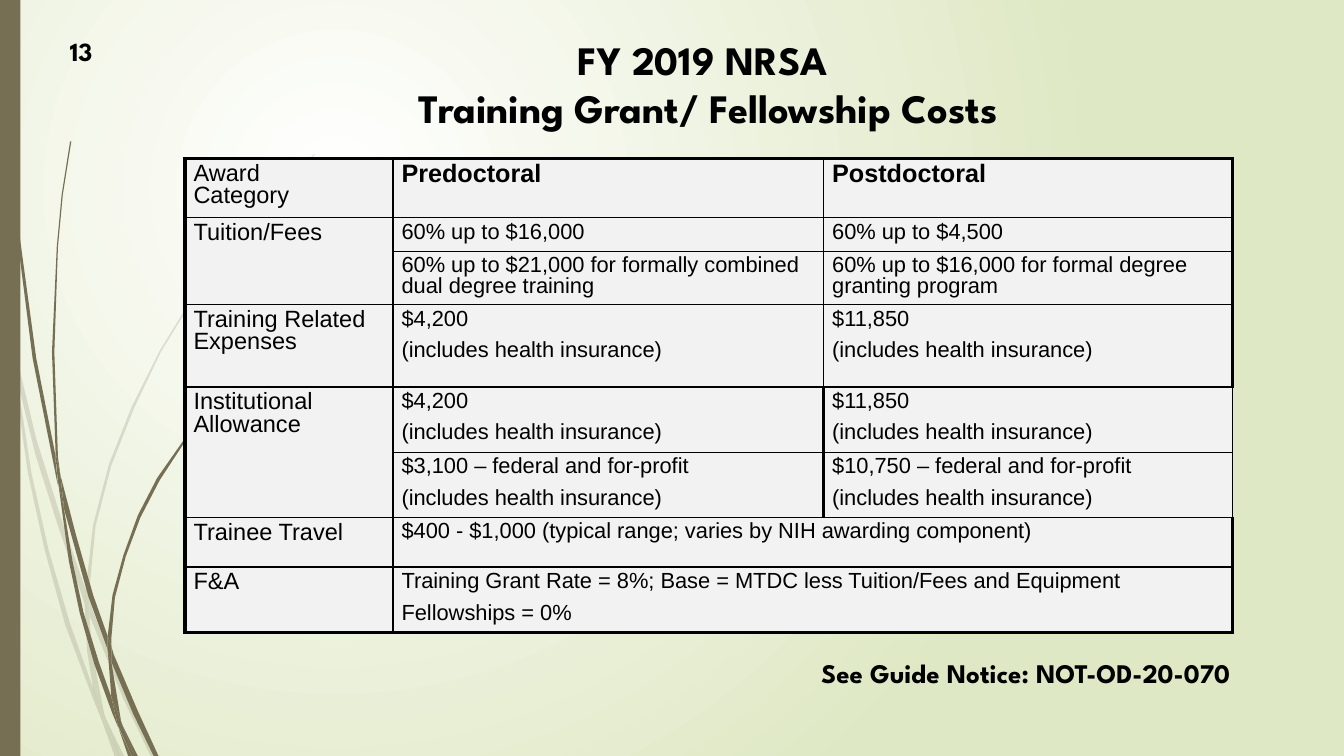
import pptx
import pptx.dml.color
import pptx.enum.shapes
import pptx.enum.text
import pptx.oxml
import pptx.oxml.ns
import pptx.util
from lxml import etree

Inches = pptx.util.Inches
Pt = pptx.util.Pt
RGBColor = pptx.dml.color.RGBColor
Align = pptx.enum.text.PP_ALIGN
Anchor = pptx.enum.text.MSO_ANCHOR
qn = pptx.oxml.ns.qn

BLACK = RGBColor(0x00, 0x00, 0x00)
WHITE = RGBColor(0xFF, 0xFF, 0xFF)
OLIVE = RGBColor(0x76, 0x6F, 0x54)
SAGE = RGBColor(0xDF, 0xE8, 0xC4)
CELL_GREY = RGBColor(0xF2, 0xF2, 0xF2)
HEADING_FONT = "League Spartan"
TABLE_FONT = "Arial"
THIN, THICK = 1, 2.25

PALE_BLADES = [
    [(0.09, 2.92), (0.07, 2.68), (0, 2.35), (0, 2.49), (0.08, 2.87)],
    [(0.48, 4.35), (0.7, 4.99), (0.71, 4.88), (0.52, 4.33), (0.3, 3.63), (0.12, 2.88), (0.14, 3.13), (0.29, 3.75)],
    [(0.77, 5.06), (0.74, 4.96), (0.74, 5.09), (1.02, 5.78), (1.25, 6.26), (1.29, 6.26), (1.06, 5.76)],
    [(0.99, 6.26), (1.03, 6.26), (0.87, 5.93)],
    [(0.77, 5.69), (0.58, 5.16), (0.4, 4.54), (0.26, 3.91), (0.14, 3.13), (0.09, 2.92), (0.23, 3.91),
     (0.37, 4.55), (0.54, 5.17), (0.77, 5.78), (0.84, 5.95), (0.82, 5.89)],
    [(0.7, 4.99), (0.72, 5.38), (0.77, 5.69), (0.8, 5.77), (0.87, 5.93), (0.86, 5.89), (0.76, 5.38),
     (0.74, 5.09), (0.73, 5.07)],
    [(0.74, 4.86), (0.79, 4.35), (0.92, 3.85), (1.11, 3.37), (1.33, 2.91), (1.6, 2.47), (1.9, 2.04), (2.24, 1.65),
     (2.41, 1.46), (2.6, 1.28), (2.6, 1.27), (2.41, 1.46), (2.23, 1.64), (1.9, 2.04), (1.59, 2.46), (1.32, 2.9),
     (1.09, 3.36), (0.9, 3.84), (0.77, 4.34), (0.71, 4.86), (0.71, 4.88), (0.74, 4.96)],
    [(0.84, 5.95), (0.95, 6.26), (0.99, 6.26)],
    [(0.73, 5.07), (0.74, 5.09), (0.74, 4.96), (0.71, 4.88), (0.7, 4.99)],
    [(0.8, 5.77), (0.77, 5.69), (0.82, 5.89), (0.84, 5.95), (0.99, 6.26), (0.87, 5.93)],
]
DARK_BLADES = [
    [(0.06, 0.91), (0.14, 1.94), (0.27, 2.96), (0.47, 3.97), (0.48, 4.01), (0.46, 3.81), (0.46, 3.77), (0.3, 2.96),
     (0.16, 1.93), (0.06, 0.91), (0.04, 0.4), (0.03, 0), (0.02, 0), (0.03, 0.4)],
    [(0.73, 4.93), (0.89, 5.37), (0.89, 5.26), (0.77, 4.92), (0.63, 4.43), (0.5, 3.93), (0.53, 4.21)],
    [(0.94, 5.41), (0.92, 5.34), (0.92, 5.47), (1.1, 5.9), (1.27, 6.25), (1.31, 6.25), (1.14, 5.88)],
    [(0.92, 5.76), (0.82, 5.48), (0.69, 5.06), (0.6, 4.64), (0.53, 4.21), (0.48, 3.98), (0.57, 4.64), (0.66, 5.07),
     (0.78, 5.49), (0.93, 5.9), (0.98, 6.02), (0.97, 5.98)],
    [(0.5, 3.93), (0.48, 3.78), (0.45, 2.91), (0.48, 2.04), (0.52, 1.61), (0.59, 1.17), (0.58, 1.17), (0.51, 1.61),
     (0.47, 2.04), (0.43, 2.91), (0.46, 3.74)],
    [(1.11, 6.25), (1.14, 6.25), (1.01, 5.99)],
    [(0.48, 3.98), (0.53, 4.21), (0.5, 3.93), (0.46, 3.74), (0.46, 3.78)],
    [(0.92, 5.28), (0.95, 4.94), (1.04, 4.6), (1.16, 4.28), (1.32, 3.97), (1.7, 3.39), (1.93, 3.12), (2.17, 2.87),
     (2.04, 2.98), (1.7, 3.38), (1.3, 3.95), (1.14, 4.26), (1.02, 4.59), (0.93, 4.92), (0.89, 5.26), (0.92, 5.34)],
    [(0.98, 6.02), (1.06, 6.25), (1.09, 6.25)],
    [(0.89, 5.37), (0.92, 5.76), (0.97, 5.88), (1.01, 5.99), (1, 5.96), (0.92, 5.47), (0.9, 5.42)],
    [(0.89, 5.37), (0.9, 5.42), (0.92, 5.47), (0.92, 5.34), (0.89, 5.26)],
    [(0.97, 5.88), (0.92, 5.76), (0.97, 5.98), (0.98, 6.01), (1.09, 6.25), (1.11, 6.25), (1.01, 5.99)],
]

INSURANCE = "(includes health insurance)"
COLUMN_WIDTHS = [1.72, 3.56, 3.38]
ROW_HEIGHTS = [0.49, 0.28, 0.44, 0.68, 0.54, 0.54, 0.41, 0.54]
COSTS = [
    ["Award\vCategory", "Predoctoral", "Postdoctoral"],
    ["Tuition/Fees", "60% up to $16,000", "60% up to $4,500"],
    ["", "60% up to $21,000 for formally combined dual degree training",
     "60% up to $16,000 for formal degree granting program"],
    ["Training Related Expenses", f"$4,200\n{INSURANCE}", f"$11,850\n{INSURANCE}"],
    ["Institutional Allowance", f"$4,200\n{INSURANCE}", f"$11,850\n{INSURANCE}"],
    ["", f"$3,100 – federal and for-profit\n{INSURANCE}",
     f"$10,750 – federal and for-profit\n{INSURANCE}"],
    ["Trainee Travel", "$400 - $1,000 (typical range; varies by NIH awarding component)", ""],
    ["F&A", "Training Grant Rate = 8%; Base = MTDC less Tuition/Fees and Equipment\n"
            "Fellowships = 0%", ""],
]
MERGES = [((1, 0), (2, 0)), ((4, 0), (5, 0)), ((6, 1), (6, 2)), ((7, 1), (7, 2))]
ALLOWANCE_ROWS = (4, 5)
WIDE_ROWS = (6, 7)


def border_widths(row, column):
    allowance = row in ALLOWANCE_ROWS
    thick_right = column == 1 if allowance else column == 2 or (column == 1 and row in WIDE_ROWS)
    return {
        "a:lnL": THICK if column == 0 or (allowance and column == 2) else THIN,
        "a:lnR": THICK if thick_right else THIN,
        "a:lnT": THICK if row == 0 else THIN,
        "a:lnB": THICK if row == len(COSTS) - 1 else THIN,
    }


class CostSlide:
    def __init__(self, presentation):
        self.slide = presentation.slides.add_slide(presentation.slide_layouts[5])
        self.shapes = self.slide.shapes

    def background(self):
        fill = self.slide.background.fill
        fill.gradient()
        for stop, color in zip(fill.gradient_stops, (WHITE, SAGE)):
            stop.color.rgb = color
        gradient = self.slide.background._cSld.find(".//" + qn("a:gradFill"))
        radial = pptx.oxml.parse_xml(
            f'<a:path {pptx.oxml.ns.nsdecls("a")} path="circle">'
            '<a:fillToRect l="50000" t="50000" r="100000" b="100000"/></a:path>')
        gradient.replace(gradient.find(qn("a:lin")), radial)

    def paint(self, shape, opacity=100):
        shape.shadow.inherit = False
        shape.line.fill.background()
        shape.fill.solid()
        shape.fill.fore_color.rgb = OLIVE
        if opacity < 100:
            color = shape._element.spPr.find(qn("a:solidFill"))[0]
            etree.SubElement(color, qn("a:alpha"), val=str(opacity * 1000))

    def blade(self, outline, opacity=100):
        points = [(Inches(x), Inches(y)) for x, y in outline]
        builder = self.shapes.build_freeform(*points[0], scale=1.0)
        builder.add_line_segments(points[1:], close=True)
        self.paint(builder.convert_to_shape(), opacity)

    def bar(self, *box):
        kind = pptx.enum.shapes.MSO_SHAPE.RECTANGLE
        self.paint(self.shapes.add_shape(kind, *map(Inches, box)))

    def style(self, paragraph, size, font=HEADING_FONT, bold=True, align=Align.LEFT):
        paragraph.alignment = align
        paragraph.font.name = font
        paragraph.font.size = Pt(size)
        paragraph.font.bold = bold
        paragraph.font.color.rgb = BLACK

    def heading(self, shape, text, size, align):
        frame = shape.text_frame
        frame.word_wrap = True
        frame.auto_size = pptx.enum.text.MSO_AUTO_SIZE.NONE
        frame.vertical_anchor = Anchor.TOP
        frame.text = text
        self.style(frame.paragraphs[0], size, align=align)

    def title(self, text, *box):
        title = self.shapes.title
        title.left, title.top, title.width, title.height = map(Inches, box)
        self.heading(title, text, 24, Align.CENTER)

    def label(self, text, size, align, *box):
        self.heading(self.shapes.add_textbox(*map(Inches, box)), text, size, align)

    def cell(self, cell, text, size, bold, widths):
        cell.margin_left = cell.margin_right = Inches(0.07)
        cell.margin_top = cell.margin_bottom = Inches(0.04)
        cell.vertical_anchor = Anchor.TOP
        cell.fill.solid()
        cell.fill.fore_color.rgb = CELL_GREY
        cell.text = text
        for index, paragraph in enumerate(cell.text_frame.paragraphs):
            self.style(paragraph, size, TABLE_FONT, bold)
            paragraph.line_spacing = 0.85
            paragraph.space_before = Pt(size / 2 if index else 0)
        properties = cell._tc.get_or_add_tcPr()
        for index, (edge, width) in enumerate(widths.items()):
            line = etree.Element(qn(edge), w=str(Pt(width)))
            fill = etree.SubElement(line, qn("a:solidFill"))
            etree.SubElement(fill, qn("a:srgbClr"), val=str(BLACK))
            properties.insert(index, line)

    def cost_table(self, left, top):
        size = sum(COLUMN_WIDTHS), sum(ROW_HEIGHTS)
        table = self.shapes.add_table(len(COSTS), len(COLUMN_WIDTHS),
                                      *map(Inches, (left, top, *size))).table
        table.first_row = table.horz_banding = False
        for column, width in zip(table.columns, COLUMN_WIDTHS):
            column.width = Inches(width)
        for row, height in zip(table.rows, ROW_HEIGHTS):
            row.height = Inches(height)
        for r, texts in enumerate(COSTS):
            for c, text in enumerate(texts):
                header = r == 0 and c > 0
                points = 14 if c == 0 else 15 if header else 13
                self.cell(table.cell(r, c), text, points, header, border_widths(r, c))
        for start, end in MERGES:
            table.cell(*start).merge(table.cell(*end))


def main():
    presentation = pptx.Presentation()
    presentation.slide_width, presentation.slide_height = Inches(11.11), Inches(6.25)
    costs = CostSlide(presentation)
    costs.background()
    for blades, opacity in ((PALE_BLADES, 20), (DARK_BLADES, 100)):
        for outline in blades:
            costs.blade(outline, opacity)
    costs.bar(0, 0, 0.17, 6.25)
    costs.title("FY 2019 NRSA \vTraining Grant/ Fellowship Costs", 1.97, 0.24, 7.77, 1.07)
    costs.cost_table(1.53, 1.31)
    costs.label("See Guide Notice: NOT-OD-20-070", 16, Align.RIGHT, 5.86, 5.38, 4.41, 0.37)
    costs.label("13", 15.6, Align.LEFT, 0.48, 0.24, 0.71, 0.33)
    presentation.save("out.pptx")


if __name__ == "__main__":
    main()
